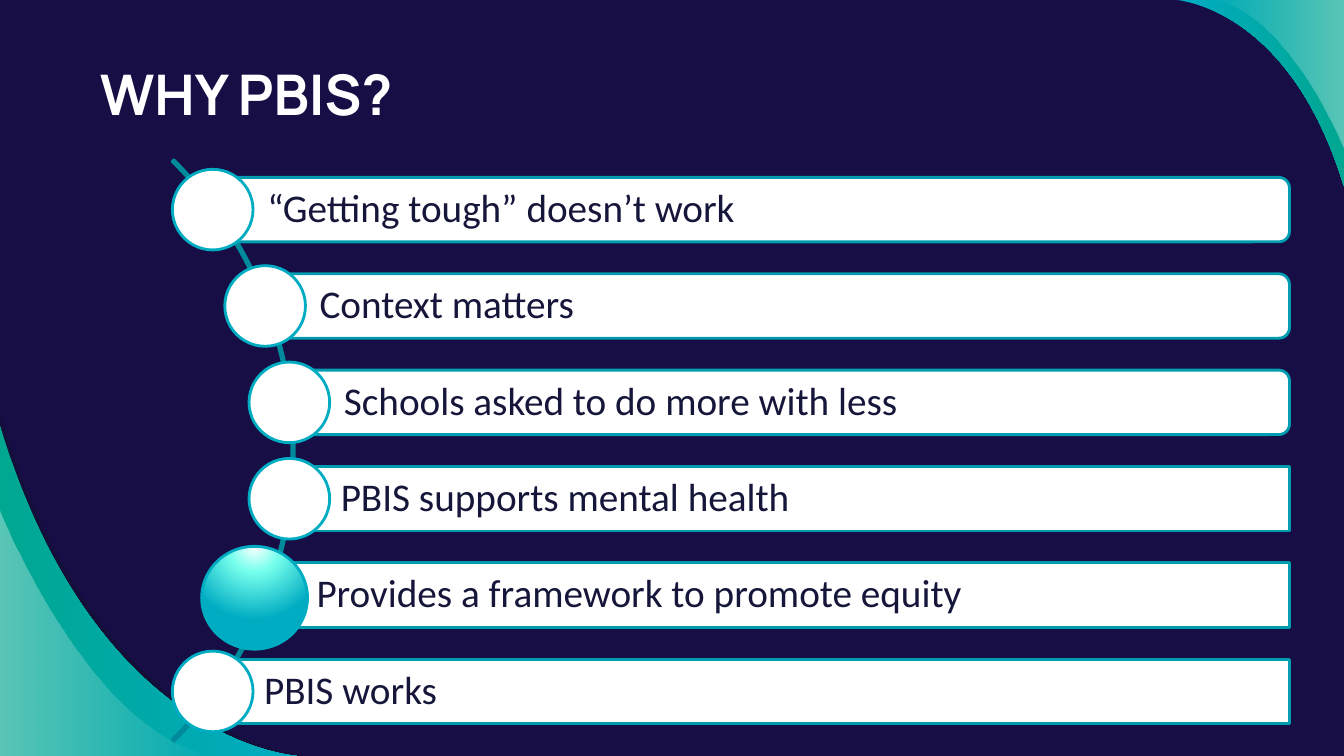
"""Build the slide on the reasons for PBIS."""
from lxml import etree
from pptx import Presentation
from pptx.dml.color import RGBColor
from pptx.enum import shapes, text
from pptx.oxml.ns import nsdecls, qn
from pptx.util import Inches, Pt

WIDE, HIGH = 13.33, 7.5
KINDS = shapes.MSO_SHAPE
COLORS = {"night": "160E44", "shade": "12102F", "cyan": "00ACC2", "green": "00A791",
          "white": "FFFFFF", "mint": "76FFED", "arc": "008A9B", "edge": "009CB0",
          "ink": "15163A"}
ROWS = [("“Getting tough” doesn’t work", 0), ("Context matters", 1),
        ("Schools asked to do more with less", 2), ("PBIS supports mental health", 2),
        ("Provides a framework to promote equity", 1), ("PBIS works", 0)]
COLS = [2.11, 2.63, 2.87]
TOP, LAST, TALL, RIGHT, DOT = 1.76, 6.54, 0.64, 12.79, 0.8
STEP = (LAST - TOP) / (len(ROWS) - 1)
ACROSS = '<a:lin ang="0" scaled="0"/>'
GLOW = '<a:path path="circle"><a:fillToRect l="50000" t="-80000" r="50000" b="180000"/></a:path>'


def tint(name):
    """Return the named colour."""
    return RGBColor.from_string(COLORS[name])


def write(frame, words, size, font, color, bold=False, after=None,
          pads=(0.1, 0.1, 0.1, 0.1)):
    """Put one formatted, left-aligned line into a text frame."""
    frame.word_wrap = True
    frame.auto_size = text.MSO_AUTO_SIZE.NONE
    frame.vertical_anchor = text.MSO_ANCHOR.MIDDLE
    (frame.margin_left, frame.margin_top,
     frame.margin_right, frame.margin_bottom) = map(Inches, pads)
    line = frame.paragraphs[0]
    line.alignment = text.PP_ALIGN.LEFT
    line.line_spacing = 0.9
    line.space_after = after
    run = line.add_run()
    run.text = words
    run.font.size, run.font.name, run.font.bold = Pt(size), font, bold
    run.font.color.rgb = tint(color)


def paint(shape, fill, line=None):
    """Set a plain fill and outline, and drop the shadow."""
    shape.shadow.inherit = False
    shape.fill.solid()
    shape.fill.fore_color.rgb = tint(fill)
    if line:
        shape.line.color.rgb = tint(line)
        shape.line.width = Pt(2)
    else:
        shape.line.fill.background()


def ink(name, clear):
    """Return the XML of a colour with its opacity in percent."""
    return f'<a:srgbClr val="{COLORS[name]}"><a:alpha val="{clear * 1000}"/></a:srgbClr>'


def blend(shape, stops, way=ACROSS):
    """Fill with (place, colour, opacity) stops; a single stop is a plain tint."""
    if len(stops) == 1:
        xml = f'<a:solidFill {nsdecls("a")}>{ink(*stops[0][1:])}</a:solidFill>'
    else:
        marks = "".join(f'<a:gs pos="{place * 1000}">{ink(name, clear)}</a:gs>'
                        for place, name, clear in stops)
        xml = (f'<a:gradFill {nsdecls("a")} rotWithShape="1">'
               f'<a:gsLst>{marks}</a:gsLst>{way}</a:gradFill>')
    props = shape._element.spPr
    props.replace(props.find(qn("a:solidFill")), etree.fromstring(xml))


def wave(slide, ends, corner, stops):
    """Fill the area between a cubic curve and a slide corner."""
    first, *rest = [(Inches(x), Inches(y)) for x, y in ends + [corner]]
    pen = slide.shapes.build_freeform(*first)
    pen.add_line_segments(rest, close=True)
    shape = pen.convert_to_shape()
    lines = list(shape._element.iter(qn("a:lnTo")))[:3]
    bend = etree.Element(qn("a:cubicBezTo"))
    lines[0].addprevious(bend)
    for line in lines:
        bend.append(line[0])
        line.getparent().remove(line)
    paint(shape, "white")
    blend(shape, stops)


def waves(slide):
    """Draw the waves in both corners."""
    low, high = (0, HIGH), (WIDE, 0)
    rise = [(0, "cyan", 100), (100, "green", 100)]
    fall = [(0, "green", 100), (100, "cyan", 100)]
    wave(slide, [(0, 4.13), (0.98, 7.39), (3.03, HIGH), (3.03, HIGH)], low,
         [(0, "shade", 54)])
    wave(slide, [(0, 4.22), (0.95, 7.39), (2.95, HIGH), (2.95, HIGH)], low, fall)
    wave(slide, [(0, 5.06), (0, 5.06), (0.91, 7.35), (2.16, HIGH)], low,
         [(0, "white", 36), (100, "white", 0)])
    wave(slide, [(11.67, 0), (11.67, 0), (12.79, 0.06), (WIDE, 1.85)], high, rise)
    wave(slide, [(12.01, 0), (12.77, 0.09), (WIDE, 1.49), (WIDE, 1.49)], high,
         [(0, "white", 0), (100, "white", 36)])


def block(slide, kind, x, y, w, h, line, fill="white"):
    """Add a preset shape with an outline."""
    shape = slide.shapes.add_shape(kind, *map(Inches, (x, y, w, h)))
    paint(shape, fill, line)
    return shape


def arc(slide):
    """Draw the thin arc that joins the dots."""
    shape = block(slide, KINDS.BLOCK_ARC, -5.24, 0.39, 8.16, 8.16, "arc", "arc")
    shape.fill.background()
    for rank, value in enumerate((189, 27, 0.003)):
        shape.adjustments[rank] = value


def row(slide, rank, words, col):
    """Add one bar with its text and dot."""
    x, y = COLS[col], TOP + rank * STEP
    kind = KINDS.ROUNDED_RECTANGLE if rank < 3 else KINDS.RECTANGLE
    bar = block(slide, kind, x, y, RIGHT - x, TALL, "edge")
    write(bar.text_frame, words, 28, "Calibri", "ink", after=Pt(9.8),
          pads=(0.51, 0.08, 0.08, 0.08))
    block(slide, KINDS.OVAL, x - DOT / 2, y + (TALL - DOT) / 2, DOT, DOT, "cyan")


def main():
    """Build and save the slide."""
    deck = Presentation()
    deck.slide_width, deck.slide_height = Inches(WIDE), Inches(HIGH)
    slide = deck.slides.add_slide(deck.slide_layouts[5])
    slide.background.fill.solid()
    slide.background.fill.fore_color.rgb = tint("night")
    waves(slide)
    title = slide.shapes.title
    title.left, title.top, title.width, title.height = map(Inches, (0.89, 0.51, 10.26, 0.92))
    write(title.text_frame, "WHY PBIS?", 40, "Manrope", "white", bold=True)
    arc(slide)
    for rank, (words, col) in enumerate(ROWS):
        row(slide, rank, words, col)
    ball = block(slide, KINDS.OVAL, 2, 5.42, 1.05, 1.02, "cyan")
    blend(ball, [(0, "white", 100), (35, "mint", 100), (100, "cyan", 100)], GLOW)
    deck.save("out.pptx")


if __name__ == "__main__":
    main()
